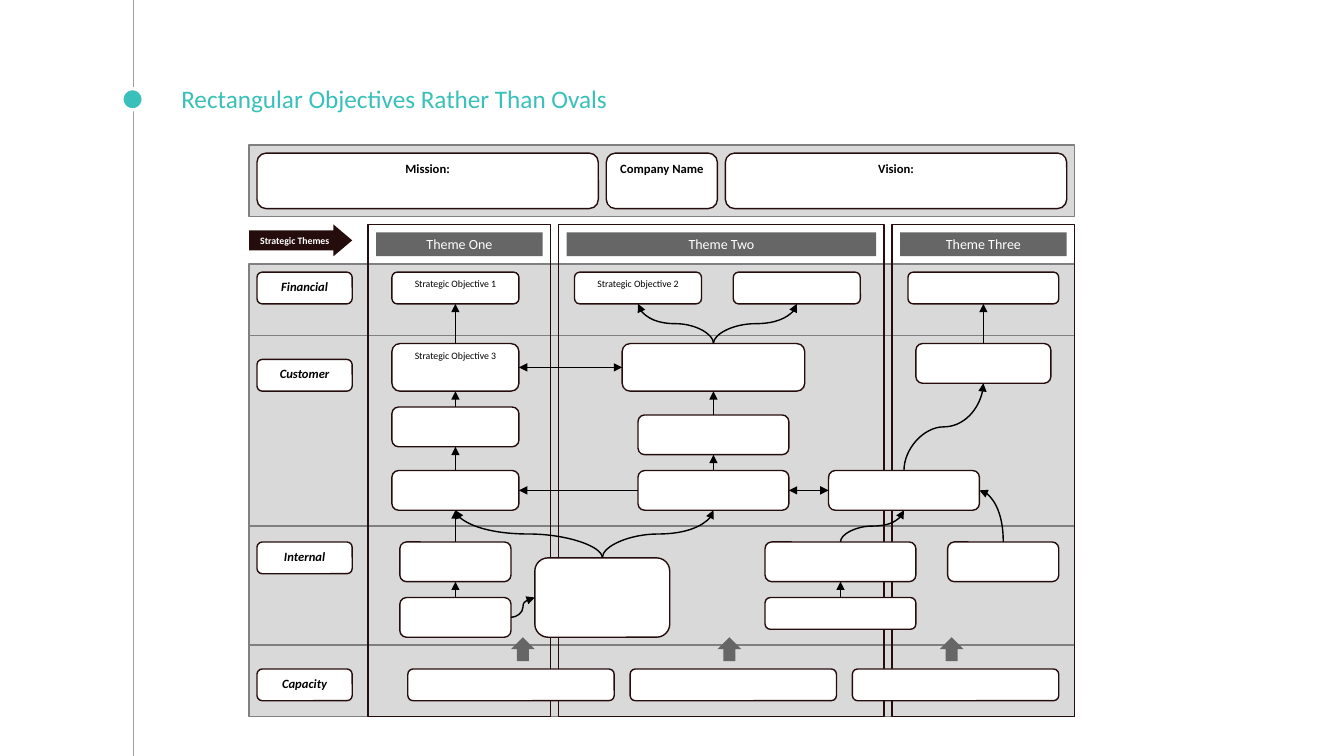
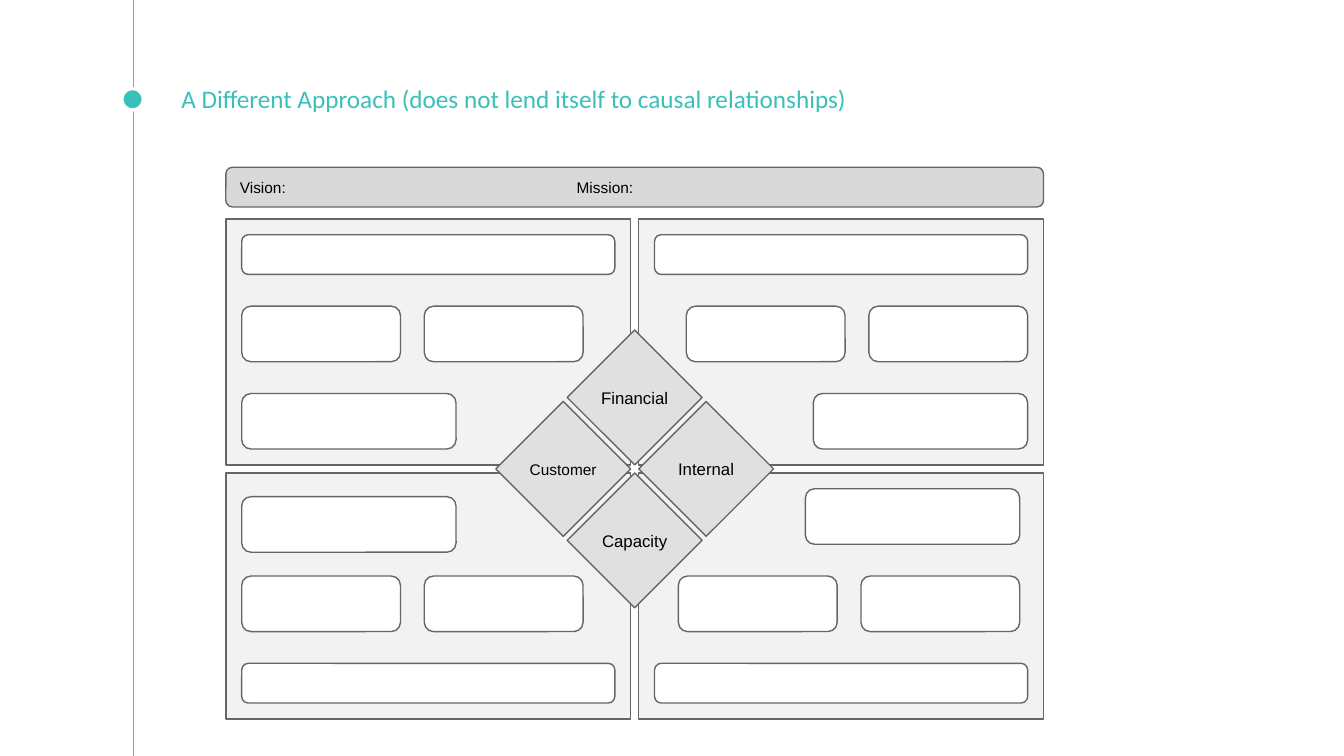
from dataclasses import dataclass

from lxml import etree
from pptx import Presentation
from pptx.dml.color import RGBColor
from pptx.enum.shapes import MSO_CONNECTOR, MSO_SHAPE
from pptx.enum.text import MSO_ANCHOR, PP_ALIGN
from pptx.oxml.ns import qn
from pptx.util import Cm, Inches, Pt

RECT, ROUND, OVAL = MSO_SHAPE.RECTANGLE, MSO_SHAPE.ROUNDED_RECTANGLE, MSO_SHAPE.OVAL
DIAMOND, RIGHT_ARROW, UP_ARROW = MSO_SHAPE.DIAMOND, MSO_SHAPE.RIGHT_ARROW, MSO_SHAPE.UP_ARROW
STRAIGHT, CURVE = MSO_CONNECTOR.STRAIGHT, MSO_CONNECTOR.CURVE
A_TOP, A_MIDDLE, A_BOTTOM = MSO_ANCHOR.TOP, MSO_ANCHOR.MIDDLE, MSO_ANCHOR.BOTTOM
ALIGN_LEFT, ALIGN_CENTER = PP_ALIGN.LEFT, PP_ALIGN.CENTER
TOP, LEFT, BOTTOM, RIGHT = range(4)

TEAL = RGBColor(0x39, 0xC0, 0xBA)
RAIL = RGBColor(0x99, 0x9F, 0xA9)
WHITE = RGBColor(0xFF, 0xFF, 0xFF)
BLACK = RGBColor(0, 0, 0)
MAROON = RGBColor(0x26, 0x0D, 0x0D)
DARK = RGBColor(0x66, 0x66, 0x66)
MID = RGBColor(0x80, 0x80, 0x80)
BAND = RGBColor(0xD9, 0xD9, 0xD9)
TILE = RGBColor(0xE0, 0xE0, 0xE0)
PANEL = RGBColor(0xF2, 0xF2, 0xF2)

UNIT = Cm(0.2)  # side of one grid cell


@dataclass(frozen=True)
class Box:
    """Place and size in grid cells."""
    x: float
    y: float
    w: float
    h: float

    def side(self, n: int) -> tuple[float, float]:
        cx, cy = self.x + self.w / 2, self.y + self.h / 2
        return ((cx, self.y), (self.x, cy), (cx, self.y + self.h), (self.x + self.w, cy))[n]


@dataclass(frozen=True)
class Style:
    size: float
    font: str = "Calibri"
    color: RGBColor = BLACK
    bold: bool = False
    italic: bool = False
    align: PP_ALIGN = ALIGN_CENTER
    anchor: MSO_ANCHOR = A_TOP
    inset: tuple[float, float] = (0.1, 0.05)
    wrap: bool = True


@dataclass(frozen=True)
class Link:
    start: str
    start_side: int
    end: str
    end_side: int
    both: bool = False


HEADING = Style(18, color=TEAL, align=ALIGN_LEFT, anchor=A_BOTTOM, inset=(0.1, 0.1))
LABEL = Style(9, bold=True)
PERSPECTIVE = Style(9, bold=True, italic=True)
OBJECTIVE = Style(7, inset=(0.04, 0.04))
THEME = Style(10, color=WHITE, anchor=A_MIDDLE)
THEMES_ARROW = Style(7, color=WHITE, bold=True, anchor=A_MIDDLE, inset=(0, 0.05))
BAR = Style(11, "Arial", align=ALIGN_LEFT, anchor=A_MIDDLE, inset=(0.12, 0))


def write(sp, text: str, style: Style, tab: float = 0) -> None:
    tf = sp.text_frame
    tf.word_wrap = style.wrap
    tf.vertical_anchor = style.anchor
    tf.margin_left = tf.margin_right = Inches(style.inset[0])
    tf.margin_top = tf.margin_bottom = Inches(style.inset[1])
    p = tf.paragraphs[0]
    p.text = text
    p.alignment = style.align
    if tab:
        tabs = etree.SubElement(p._p.get_or_add_pPr(), qn("a:tabLst"))
        etree.SubElement(tabs, qn("a:tab"), pos=str(Inches(tab)), algn="l")
    p.font.name, p.font.size = style.font, Pt(style.size)
    p.font.bold, p.font.italic = style.bold, style.italic
    p.font.color.rgb = style.color


def paint(sp, fill: RGBColor | None, line: RGBColor | None, width: float = 1) -> None:
    sp.shadow.inherit = False
    if fill is None:
        sp.fill.background()
    else:
        sp.fill.solid()
        sp.fill.fore_color.rgb = fill
    if line is None:
        sp.line.fill.background()
    else:
        sp.line.color.rgb = line
        sp.line.width = Pt(width)


def stroke(cxn, color: RGBColor, width: float, tail: bool = False, head: bool = False) -> None:
    cxn.line.color.rgb = color
    cxn.line.width = Pt(width)
    sp_pr = cxn._element.spPr
    ln = sp_pr.find(qn("a:ln"))
    for tag, shown in (("a:headEnd", head), ("a:tailEnd", tail)):
        if shown:
            etree.SubElement(ln, qn(tag), type="triangle")
    etree.SubElement(sp_pr, qn("a:effectLst"))


@dataclass
class Grid:
    """A slide's cell grid, with its left and top edge in inches."""
    shapes: object
    left: float
    top: float

    def point(self, x: float, y: float) -> tuple[int, int]:
        return Inches(self.left) + int(x * UNIT), Inches(self.top) + int(y * UNIT)

    def add(self, kind, box: Box, fill: RGBColor | None, line: RGBColor | None,
            text: str = "", style: Style = LABEL, tab: float = 0):
        sp = self.shapes.add_shape(kind, *self.point(box.x, box.y),
                                   int(box.w * UNIT), int(box.h * UNIT))
        paint(sp, fill, line)
        if text:
            write(sp, text, style, tab)
        return sp

    def curve(self, start: Box, start_side: int, end: Box, end_side: int):
        x1, y1 = self.point(*start.side(start_side))
        x2, y2 = self.point(*end.side(end_side))
        if start_side != TOP:
            return self.shapes.add_connector(CURVE, x1, y1, x2, y2)
        # A curve that leaves upwards is a sideways one, turned about its centre
        cx, cy = (x1 + x2) // 2, (y1 + y2) // 2
        dx, dy = abs(x2 - x1) // 2, abs(y2 - y1) // 2
        turn = 1 if x2 > x1 else -1
        cxn = self.shapes.add_connector(CURVE, cx + turn * dy, cy + dx, cx - turn * dy, cy - dx)
        cxn.rotation = 90 * turn % 360
        if end_side != BOTTOM:
            cxn._element.spPr.find(qn("a:prstGeom")).set("prst", "curvedConnector2")
        return cxn


def new_slide(prs, title: str):
    """Blank slide with the rail, the dot and the title."""
    shapes = prs.slides.add_slide(prs.slide_layouts[6]).shapes
    rail_x = Inches(1.32)
    stroke(shapes.add_connector(STRAIGHT, rail_x, 0, rail_x, prs.slide_height), RAIL, 0.75)
    dot = shapes.add_shape(OVAL, Inches(1.21), Inches(0.88), Inches(0.21), Inches(0.21))
    paint(dot, TEAL, WHITE, 2.25)
    write(shapes.add_textbox(Inches(1.7), Inches(0.73), Inches(10), Inches(0.5)), title, HEADING)
    return shapes


# Strategy map: objectives by perspective and theme
OBJECTIVES = {
    "financial 1": Box(18, 16, 16, 4),
    "financial 2": Box(41, 16, 16, 4),
    "financial 3": Box(61, 16, 16, 4),
    "financial 4": Box(83, 16, 19, 4),
    "customer 1 top": Box(18, 25, 16, 6),
    "customer 1 mid": Box(18, 33, 16, 5),
    "customer 1 low": Box(18, 41, 16, 5),
    "customer 2 top": Box(47, 25, 23, 6),
    "customer 2 mid": Box(49, 34, 19, 5),
    "customer 2 low": Box(49, 41, 19, 5),
    "customer 3 top": Box(84, 25, 17, 5),
    "customer 3 low": Box(73, 41, 19, 5),
    "internal 1 top": Box(19, 50, 14, 5),
    "internal 1 low": Box(19, 57, 14, 5),
    "internal 2": Box(36, 52, 17, 10),
    "internal 3 top": Box(65, 50, 19, 5),
    "internal 3 low": Box(65, 57, 19, 4),
    "internal 4": Box(88, 50, 14, 5),
    "capacity 1": Box(20, 66, 26, 4),
    "capacity 2": Box(48, 66, 26, 4),
    "capacity 3": Box(76, 66, 26, 4),
}
OBJECTIVE_TEXT = {
    "financial 1": "Strategic Objective 1",
    "financial 2": "Strategic Objective 2",
    "customer 1 top": "Strategic Objective 3",
}
STRAIGHT_LINKS = [Link(a, TOP, b, BOTTOM) for a, b in (
    ("customer 1 low", "customer 1 mid"),
    ("customer 1 mid", "customer 1 top"),
    ("customer 1 top", "financial 1"),
    ("customer 2 low", "customer 2 mid"),
    ("customer 2 mid", "customer 2 top"),
    ("customer 3 top", "financial 4"),
    ("internal 3 low", "internal 3 top"),
    ("internal 1 top", "customer 1 low"),
    ("internal 1 low", "internal 1 top"),
)] + [
    Link("customer 2 low", LEFT, "customer 1 low", RIGHT),
    Link("customer 2 top", LEFT, "customer 1 top", RIGHT, both=True),
    Link("customer 3 low", LEFT, "customer 2 low", RIGHT, both=True),
]
CURVED_LINKS = [Link(a, TOP, b, BOTTOM) for a, b in (
    ("customer 2 top", "financial 2"),
    ("customer 2 top", "financial 3"),
    ("customer 3 low", "customer 3 top"),
    ("internal 2", "customer 2 low"),
    ("internal 2", "customer 1 low"),
    ("internal 3 top", "customer 3 low"),
)] + [
    Link("internal 4", TOP, "customer 3 low", RIGHT),
    Link("internal 1 low", RIGHT, "internal 2", LEFT),
]
THEMES = (("Theme One", 15, 23), ("Theme Two", 39, 41), ("Theme Three", 81, 23))


def strategy_map(prs) -> None:
    grid = Grid(new_slide(prs, "Rectangular Objectives Rather Than Ovals"), 2.47, 1.44)
    # Bands and theme frames
    for y, h in ((0, 9), (15, 9), (24, 24), (48, 15), (63, 9)):
        grid.add(RECT, Box(0, y, 104, h), BAND, MID)
    for _, x, w in THEMES:
        grid.add(RECT, Box(x, 10, w, 62), None, MAROON)
    # Header and perspective labels
    for text, x, w in (("Mission:", 1, 43), ("Company Name", 45, 14), ("Vision:", 60, 43)):
        grid.add(ROUND, Box(x, 1, w, 7), WHITE, MAROON, text)
    for text, y in (("Financial", 16), ("Customer", 27), ("Internal", 50), ("Capacity", 66)):
        grid.add(ROUND, Box(1, y, 12, 4), WHITE, MAROON, text, PERSPECTIVE)
    # Objectives
    nodes = {name: grid.add(ROUND, box, WHITE, MAROON, OBJECTIVE_TEXT.get(name, ""), OBJECTIVE)
             for name, box in OBJECTIVES.items()}
    # Theme headings
    arrow = grid.add(RIGHT_ARROW, Box(0, 10, 13, 4), MAROON, None, "Strategic Themes", THEMES_ARROW)
    arrow.adjustments[0], arrow.adjustments[1] = 0.63, 0.59
    for text, x, w in THEMES:
        grid.add(RECT, Box(x + 1, 11, w - 2, 3), DARK, None, text, THEME)
    # Causal links
    for link in STRAIGHT_LINKS:
        cxn = grid.shapes.add_connector(STRAIGHT, 0, 0, 0, 0)
        cxn.begin_connect(nodes[link.start], link.start_side)
        cxn.end_connect(nodes[link.end], link.end_side)
        stroke(cxn, BLACK, 1, tail=True, head=link.both)
    for link in CURVED_LINKS:
        cxn = grid.curve(OBJECTIVES[link.start], link.start_side,
                         OBJECTIVES[link.end], link.end_side)
        stroke(cxn, BLACK, 1, tail=True)
    for x in (33, 59, 87):
        grid.add(UP_ARROW, Box(x, 62, 3, 3), DARK, None)


def four_panels(prs) -> None:
    title = "A Different Approach (does not lend itself to causal relationships)"
    grid = Grid(new_slide(prs, title), 2.24, 1.66)
    # Panels
    for y in (38.5, 6.5):
        for x in (0, 52):
            grid.add(RECT, Box(x, y, 51, 31), PANEL, DARK)
    # Central diamonds
    for text, x, y, size in (("Financial", 43, 20.5, 12), ("Capacity", 43, 38.5, 12),
                             ("Internal", 52, 29.5, 12), ("Customer", 34, 29.5, 11)):
        style = Style(size, "Arial", anchor=A_MIDDLE, inset=(0, 0.05), wrap=False)
        grid.add(DIAMOND, Box(x, y, 17, 17), TILE, DARK, text, style)
    # Objectives: rows of equal boxes
    for y, w, h, columns in ((8.5, 47, 5, (2, 54)),
                             (17.5, 20, 7, (2, 25, 58, 81)),
                             (28.5, 27, 7, (2, 74)),
                             (40.5, 27, 7, (73,)),
                             (41.5, 27, 7, (2,)),
                             (51.5, 20, 7, (2, 25, 57, 80)),
                             (62.5, 47, 5, (2, 54))):
        for x in columns:
            grid.add(ROUND, Box(x, y, w, h), WHITE, DARK)
    # Vision and mission bar
    grid.add(ROUND, Box(0, 0, 103, 5), BAND, DARK, "Vision:\tMission:", BAR, tab=3.34)


def main() -> None:
    prs = Presentation()
    prs.slide_width, prs.slide_height = Inches(13.33), Inches(7.5)
    strategy_map(prs)
    four_panels(prs)
    prs.save("out.pptx")


if __name__ == "__main__":
    main()
